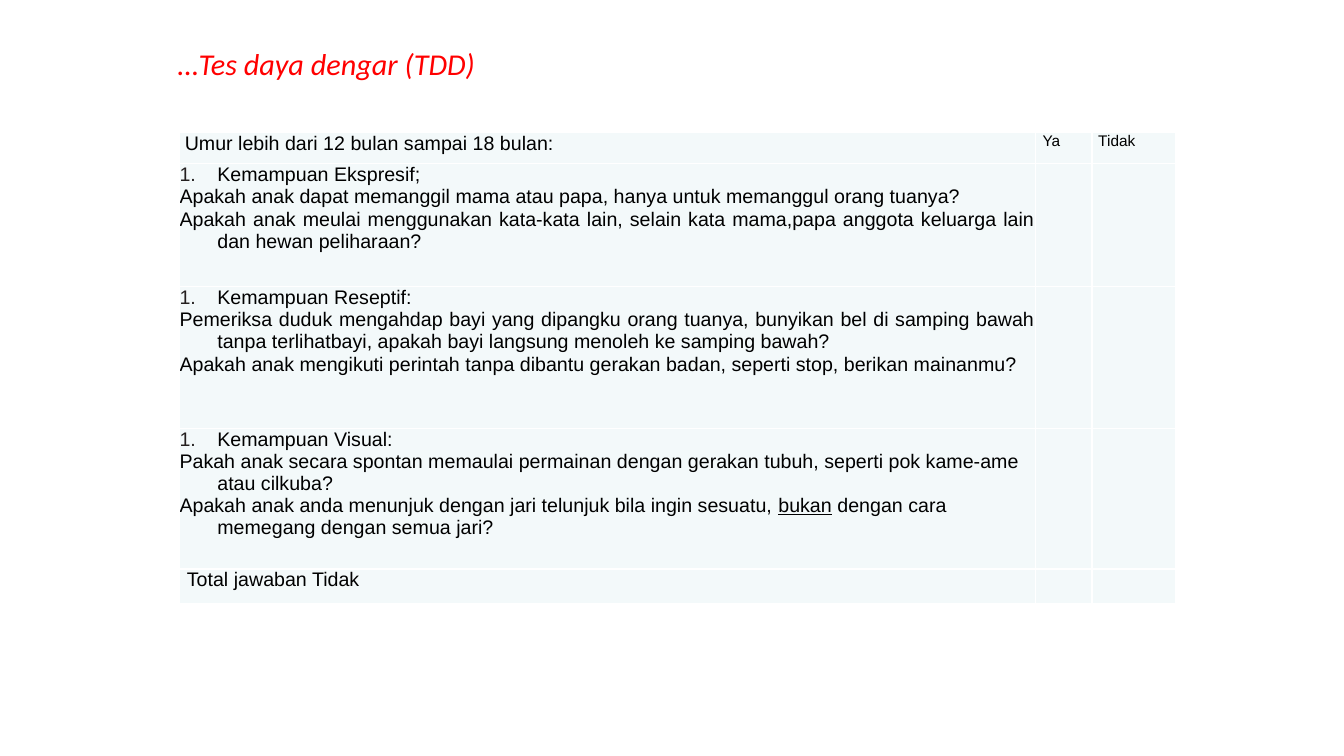
from dataclasses import dataclass

import pptx
import pptx.dml.color
import pptx.enum.text
import pptx.oxml
import pptx.oxml.ns
import pptx.util

PX = 9525  # EMU per px, 96 px to the inch
COLOURS = {"title": "FF0000", "text": "000000", "number": "231F1F",
           "cell": "F3F9FA", "border": "FFFFFF"}
HANG = 36
ALIGN = pptx.enum.text.PP_ALIGN


@dataclass(frozen=True)
class Line:
    text: str
    size: int = 14
    left: int = 0
    hanging: int = 0
    numbered: bool = False
    justified: bool = False
    underlined: str = ""


def px(length: int) -> pptx.util.Emu:
    return pptx.util.Emu(length * PX)


def colour(name: str) -> pptx.dml.color.RGBColor:
    return pptx.dml.color.RGBColor.from_string(COLOURS[name])


def add_xml(parent, xml: str) -> None:
    opening, rest = xml.split(">", 1)
    namespace = pptx.oxml.ns.nsdecls("a")
    parent.append(pptx.oxml.parse_xml(f"{opening} {namespace}>{rest}"))


def ability(heading: str, *questions: str, justified: bool = True,
            underlined: str = "") -> list[Line]:
    """A numbered heading followed by its questions."""
    return [Line(text, left=HANG, hanging=HANG, numbered=text == heading,
                 justified=justified,
                 underlined=underlined if underlined in text else "")
            for text in (heading, *questions)]


def write_line(paragraph, line: Line) -> None:
    if line.underlined:
        before, after = line.text.split(line.underlined)
        for piece in (before, line.underlined, after):
            run = paragraph.add_run()
            run.text = piece
            run.font.underline = piece == line.underlined
    else:
        paragraph.text = line.text
    for run in paragraph.runs:
        run.font.name = "Arial"
        run.font.size = pptx.util.Pt(line.size)
        run.font.color.rgb = colour("text")

    paragraph.alignment = ALIGN.JUSTIFY if line.justified else ALIGN.LEFT
    if line.justified:
        paragraph.space_before = pptx.util.Pt(0.2)
    properties = paragraph._p.get_or_add_pPr()
    properties.set("marL", str(px(line.left)))
    properties.set("indent", str(px(-line.hanging)))
    if line.numbered:
        add_xml(properties, f'<a:buClr><a:srgbClr val="{COLOURS["number"]}"/></a:buClr>')
        add_xml(properties, '<a:buAutoNum type="arabicPeriod"></a:buAutoNum>')


def fill_cell(cell, lines: list[Line]) -> None:
    cell.margin_left = cell.margin_right = 0
    cell.margin_top = cell.margin_bottom = 0
    for side in "LRTB":
        add_xml(cell._tc.get_or_add_tcPr(),
                f'<a:ln{side} w="12700"><a:solidFill>'
                f'<a:srgbClr val="{COLOURS["border"]}"/></a:solidFill></a:ln{side}>')
    cell.fill.solid()
    cell.fill.fore_color.rgb = colour("cell")
    frame = cell.text_frame
    for number, line in enumerate(lines):
        write_line(frame.add_paragraph() if number else frame.paragraphs[0], line)


def add_title(slide) -> None:
    title = slide.shapes.add_textbox(px(160), px(39), px(864), px(48)).text_frame
    title.word_wrap = True
    title.vertical_anchor = pptx.enum.text.MSO_ANCHOR.MIDDLE
    title.text = "…Tes daya dengar (TDD)"
    title.paragraphs[0].line_spacing = 0.9
    font = title.paragraphs[0].runs[0].font
    font.name = "Calibri"
    font.size = pptx.util.Pt(21.6)
    font.italic = True
    font.color.rgb = colour("title")


def add_checklist(slide) -> None:
    widths = (815, 54, 80)
    heights = (30, 117, 135, 134, 33)
    rows = [
        [[Line("Umur lebih dari 12 bulan sampai 18 bulan:", left=5)],
         [Line("Ya", size=11, left=7)], [Line("Tidak", size=11, left=6)]],
        [ability(
            "Kemampuan Ekspresif;",
            "Apakah anak dapat memanggil mama atau papa, hanya untuk memanggul orang tuanya?",
            "Apakah anak meulai menggunakan kata-kata lain, selain kata mama,papa "
            "anggota keluarga lain dan hewan peliharaan?")],
        [ability(
            "Kemampuan Reseptif:",
            "Pemeriksa duduk mengahdap bayi yang dipangku orang tuanya, bunyikan bel "
            "di samping bawah tanpa terlihatbayi, apakah bayi langsung menoleh ke "
            "samping bawah?",
            "Apakah anak mengikuti perintah tanpa dibantu gerakan badan, seperti "
            "stop, berikan mainanmu?")],
        [ability(
            "Kemampuan Visual:",
            "Pakah anak secara spontan memaulai permainan dengan gerakan tubuh, "
            "seperti pok kame-ame atau cilkuba?",
            "Apakah anak anda menunjuk dengan jari telunjuk bila ingin sesuatu, "
            "bukan dengan cara memegang dengan semua jari?",
            justified=False, underlined="bukan")],
        [[Line("Total jawaban Tidak", left=31, hanging=24, justified=True)]],
    ]
    checklist = slide.shapes.add_table(len(rows), len(widths), px(171), px(126),
                                       px(sum(widths)), px(sum(heights))).table
    checklist.first_row = False
    checklist.horz_banding = False
    for column, width in zip(checklist.columns, widths):
        column.width = px(width)
    for row, height, contents in zip(checklist.rows, heights, rows):
        row.height = px(height)
        for index, cell in enumerate(row.cells):
            fill_cell(cell, contents[index] if index < len(contents) else [])


def main() -> None:
    presentation = pptx.Presentation()
    presentation.slide_width = px(1280)
    presentation.slide_height = px(720)
    slide = presentation.slides.add_slide(presentation.slide_layouts[6])
    add_title(slide)
    add_checklist(slide)
    presentation.save("out.pptx")


if __name__ == "__main__":
    main()
